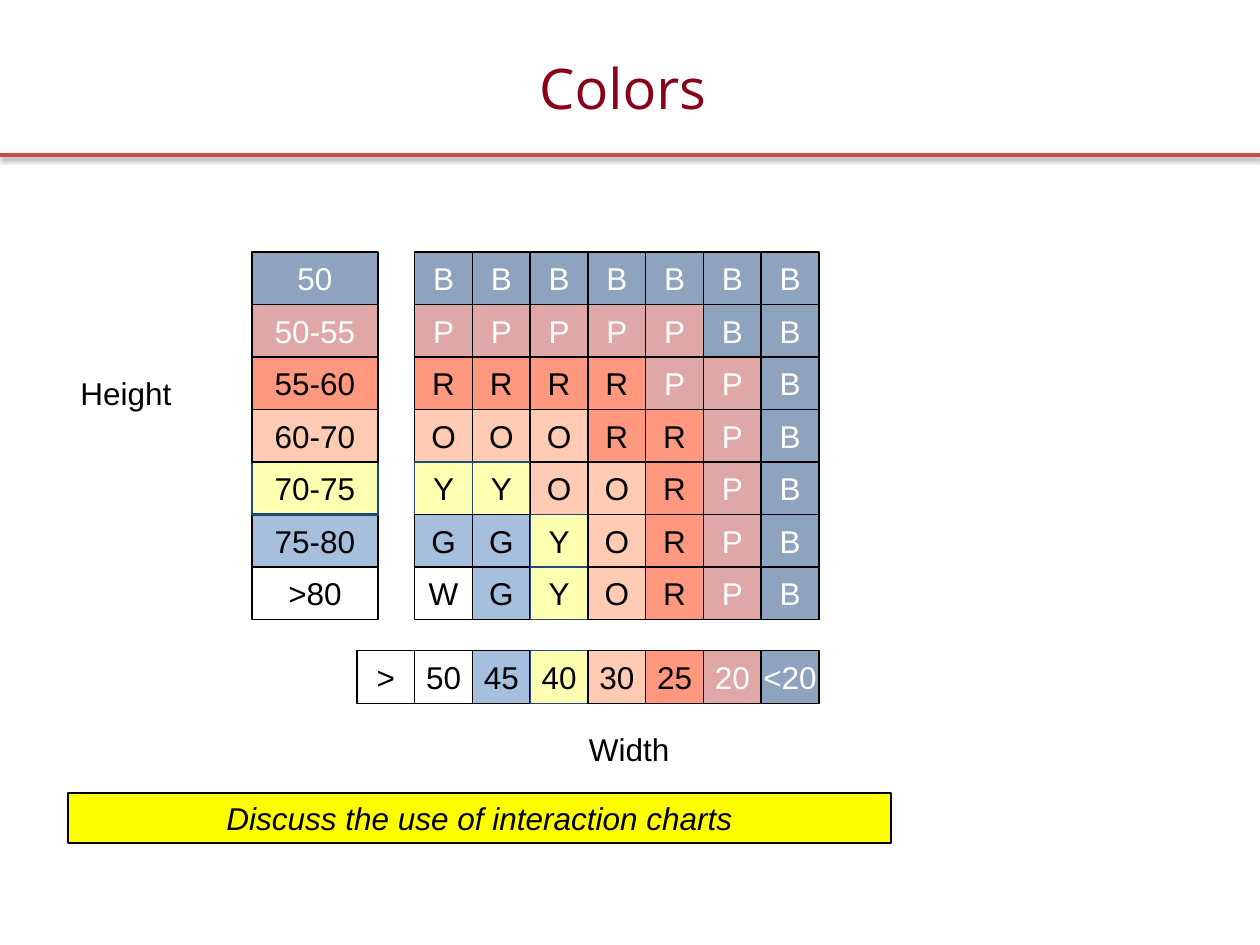
import pptx
import pptx.dml.color
import pptx.enum.shapes
import pptx.enum.text
import pptx.oxml
import pptx.oxml.ns
import pptx.util
from lxml import etree
from pptx.util import Cm, Pt

COLORS = {
    "title": "890018", "rule": "C0504D", "banner": "FFFF00",
    "black": "000000", "white": "FFFFFF", "navy": "1F497D",
    "B": "1F497D", "P": "C0504D", "R": "FF3300", "O": "FF9966",
    "Y": "FFFF66", "G": "4F81BD", "W": "FFFFFF",
}
HEIGHTS = ["50", "50-55", "55-60", "60-70", "70-75", "75-80", ">80"]
HEIGHT_CODES = "BPROYGW"
WIDTHS = [">", "50", "45", "40", "30", "25", "20", "<20"]
WIDTH_CODES = "WWGYORPB"
CHART_ROWS = ["BBBBBBB", "PPPPPBB", "RRRRPPB", "OOORRPB",
              "YYOORPB", "GGYORPB", "WGYORPB"]

CHART_LEFT, CHART_TOP = 8.36, 5.08
CELL_WIDTH, CELL_HEIGHT = 8.15 / 7, 7.41 / 7
HEIGHT_LEFT, HEIGHT_WIDTH = 5.08, 2.54
WIDTH_TOP = 13.12


def rgb(name):
    return pptx.dml.color.RGBColor.from_string(COLORS[name])


def set_text(shape, text, color="black", size=18, font="Arial", center=True, italic=False):
    shape.text_frame.text = text
    paragraph = shape.text_frame.paragraphs[0]
    if center:
        paragraph.alignment = pptx.enum.text.PP_ALIGN.CENTER
    run_font = paragraph.runs[0].font
    run_font.name = font
    run_font.size = Pt(size)
    run_font.italic = italic
    run_font.color.rgb = rgb(color)


def add_title(slide, text):
    title = slide.shapes.title
    title.left, title.top, title.width, title.height = Cm(0), Cm(0.91), Cm(25.4), Cm(1.7)
    title.text_frame.vertical_anchor = pptx.enum.text.MSO_ANCHOR.MIDDLE
    set_text(title, text, "title", 32, "Open Sans")


def add_rule(slide):
    """Draw the line under the title, with a soft shadow below it."""
    rule = slide.shapes.add_connector(
        pptx.enum.shapes.MSO_CONNECTOR.STRAIGHT, Cm(0), Cm(3.12), Cm(25.4), Cm(3.12))
    rule.line.color.rgb = rgb("rule")
    rule.line.width = Pt(2)
    qn = pptx.oxml.ns.qn
    effects = etree.SubElement(rule._element.spPr, qn("a:effectLst"))
    shadow = etree.SubElement(effects, qn("a:outerShdw"), blurRad="40000", dist="20000",
                              dir="5400000", rotWithShape="0")
    color = etree.SubElement(shadow, qn("a:srgbClr"), val=COLORS["black"])
    etree.SubElement(color, qn("a:alpha"), val="38000")


def add_label(slide, text, left, top, width, center):
    label = slide.shapes.add_textbox(Cm(left), Cm(top), Cm(width), Cm(1.27))
    label.text_frame.word_wrap = True
    set_text(label, text, center=center)


def add_box(slide, left, top, width, height, fill, line, line_width):
    box = slide.shapes.add_shape(pptx.enum.shapes.MSO_SHAPE.RECTANGLE,
                                 Cm(left), Cm(top), Cm(width), Cm(height))
    box.shadow.inherit = False
    box.fill.solid()
    box.fill.fore_color.rgb = rgb(fill)
    box.line.color.rgb = rgb(line)
    box.line.width = Pt(line_width)
    return box


def add_cell(slide, text, code, left, top, width=CELL_WIDTH, line_width=0.75):
    """Add a half-transparent cell in the colour of its letter code."""
    line = "navy" if code == "Y" else "black"
    cell = add_box(slide, left, top, width, CELL_HEIGHT, code, line, line_width)
    color = cell._element.spPr.find(".//" + pptx.oxml.ns.qn("a:srgbClr"))
    etree.SubElement(color, pptx.oxml.ns.qn("a:alpha"), val="50000")
    cell.text_frame.word_wrap = False
    cell.text_frame.vertical_anchor = pptx.enum.text.MSO_ANCHOR.MIDDLE
    set_text(cell, text, "white" if code in "BP" else "black")


def add_chart_cells(slide):
    for row, codes in enumerate(CHART_ROWS):
        for column, code in enumerate(codes):
            add_cell(slide, code, code, CHART_LEFT + column * CELL_WIDTH,
                     CHART_TOP + row * CELL_HEIGHT)


def add_height_scale(slide):
    """Stack the cells from the bottom up, so each overlaps the one below."""
    for row in reversed(range(len(HEIGHTS))):
        code = HEIGHT_CODES[row]
        add_cell(slide, HEIGHTS[row], code, HEIGHT_LEFT, CHART_TOP + row * CELL_HEIGHT,
                 HEIGHT_WIDTH, 1.5 if code == "Y" else 0.75)


def add_width_scale(slide):
    for column, (text, code) in enumerate(zip(WIDTHS, WIDTH_CODES)):
        add_cell(slide, text, code, CHART_LEFT + (column - 1) * CELL_WIDTH, WIDTH_TOP)


def add_banner(slide, text):
    banner = add_box(slide, 1.37, 15.98, 16.59, 1.02, "banner", "black", 1)
    banner.text_frame.vertical_anchor = pptx.enum.text.MSO_ANCHOR.TOP
    set_text(banner, text, italic=True)


def main():
    presentation = pptx.Presentation()
    presentation.slide_width, presentation.slide_height = Cm(25.4), Cm(19.05)
    slide = presentation.slides.add_slide(presentation.slide_layouts[5])
    add_rule(slide)
    add_title(slide, "Colors ")
    add_label(slide, "Width", 10.46, 14.6, 4.45, center=True)
    add_label(slide, "Height", 1.37, 7.41, 4.24, center=False)
    add_chart_cells(slide)
    add_height_scale(slide)
    add_width_scale(slide)
    add_banner(slide, "Discuss the use of interaction charts")
    presentation.save("out.pptx")


if __name__ == "__main__":
    main()
